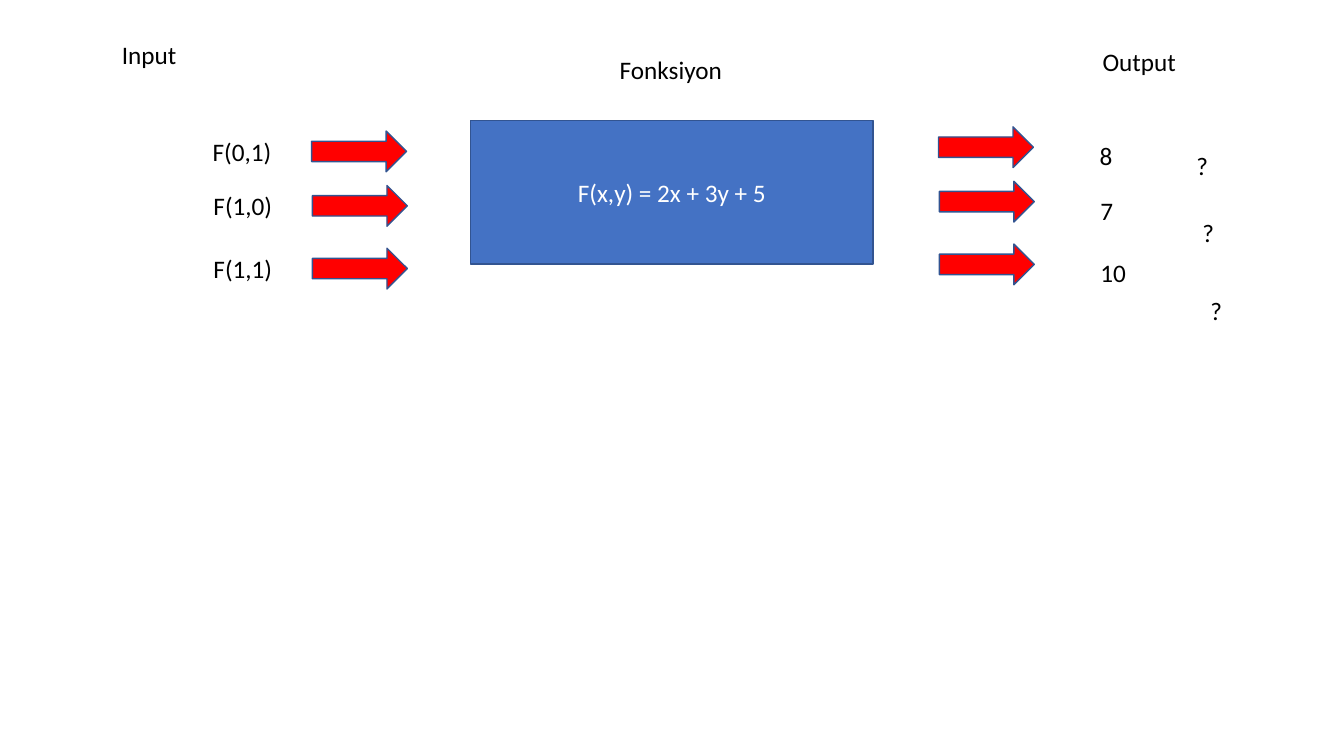
from dataclasses import dataclass

from pptx import Presentation
from pptx.dml.color import RGBColor
from pptx.enum.shapes import MSO_SHAPE
from pptx.enum.text import MSO_ANCHOR, MSO_AUTO_SIZE, PP_ALIGN
from pptx.util import Pt

RECT = MSO_SHAPE.RECTANGLE
ARROW = MSO_SHAPE.RIGHT_ARROW
MIDDLE = MSO_ANCHOR.MIDDLE
GROW = MSO_AUTO_SIZE.SHAPE_TO_FIT_TEXT
CENTER = PP_ALIGN.CENTER


@dataclass(frozen=True)
class Theme:
    font: str = "Calibri"
    size: float = 18
    line: float = 1
    ink: RGBColor = RGBColor(0, 0, 0)
    light: RGBColor = RGBColor(255, 255, 255)
    box: RGBColor = RGBColor(0x44, 0x72, 0xC4)
    edge: RGBColor = RGBColor(0x32, 0x54, 0x91)
    arrow: RGBColor = RGBColor(255, 0, 0)


THEME = Theme()
HIGH = 29.1


def add_run(par, text, color):
    run = par.add_run()
    run.text = text
    run.font.name = THEME.font
    run.font.size = Pt(THEME.size)
    run.font.color.rgb = color


def add_label(slide, text, left, top, width):
    label = slide.shapes.add_textbox(Pt(left), Pt(top), Pt(width), Pt(HIGH))
    frame = label.text_frame
    frame.word_wrap = False
    frame.auto_size = GROW
    add_run(frame.paragraphs[0], text, THEME.ink)


def add_block(slide, kind, left, top, width, height, fill):
    block = slide.shapes.add_shape(kind, Pt(left), Pt(top), Pt(width), Pt(height))
    block.shadow.inherit = False
    block.fill.solid()
    block.fill.fore_color.rgb = fill
    block.line.color.rgb = THEME.edge
    block.line.width = Pt(THEME.line)
    return block


def add_rule(slide, text):
    block = add_block(slide, RECT, 336.2, 85.9, 287.5, 102.8, THEME.box)
    frame = block.text_frame
    frame.vertical_anchor = MIDDLE
    par = frame.paragraphs[0]
    par.alignment = CENTER
    add_run(par, text, THEME.light)


def add_arrow(slide, left, top):
    add_block(slide, ARROW, left, top, 67.8, HIGH, THEME.arrow)


def add_call(slide, call, value, left, top, width):
    add_label(slide, call, left, top, 56.9)
    add_arrow(slide, left + 77.8, top)
    add_arrow(slide, left + 525.6, top - 3)
    add_label(slide, value, left + 633.6, top + 3.2, width)


def main():
    deck = Presentation()
    deck.slide_width = Pt(960)
    deck.slide_height = Pt(540)
    slide = deck.slides.add_slide(deck.slide_layouts[6])

    add_rule(slide, "F(x,y) = 2x + 3y + 5")

    heads = [
        ("Input", 79.9, 24.5, 54),
        ("Fonksiyon", 435.6, 35.3, 88.6),
        ("Output", 780.5, 29.5, 67.7),
    ]
    for head in heads:
        add_label(slide, *head)

    calls = [
        ("F(0,1)", "8", 144.8, 93.6, 23.8),
        ("F(1,0)", "7", 145.4, 132.5, 23.8),
        ("F(1,1)", "10", 145.4, 177.3, 33.1),
    ]
    for call in calls:
        add_call(slide, *call)

    for left, top in [(847.4, 103.7), (851.8, 151.9), (857.5, 207.4)]:
        add_label(slide, "?", left, top, 23)

    deck.save("out.pptx")


if __name__ == "__main__":
    main()
